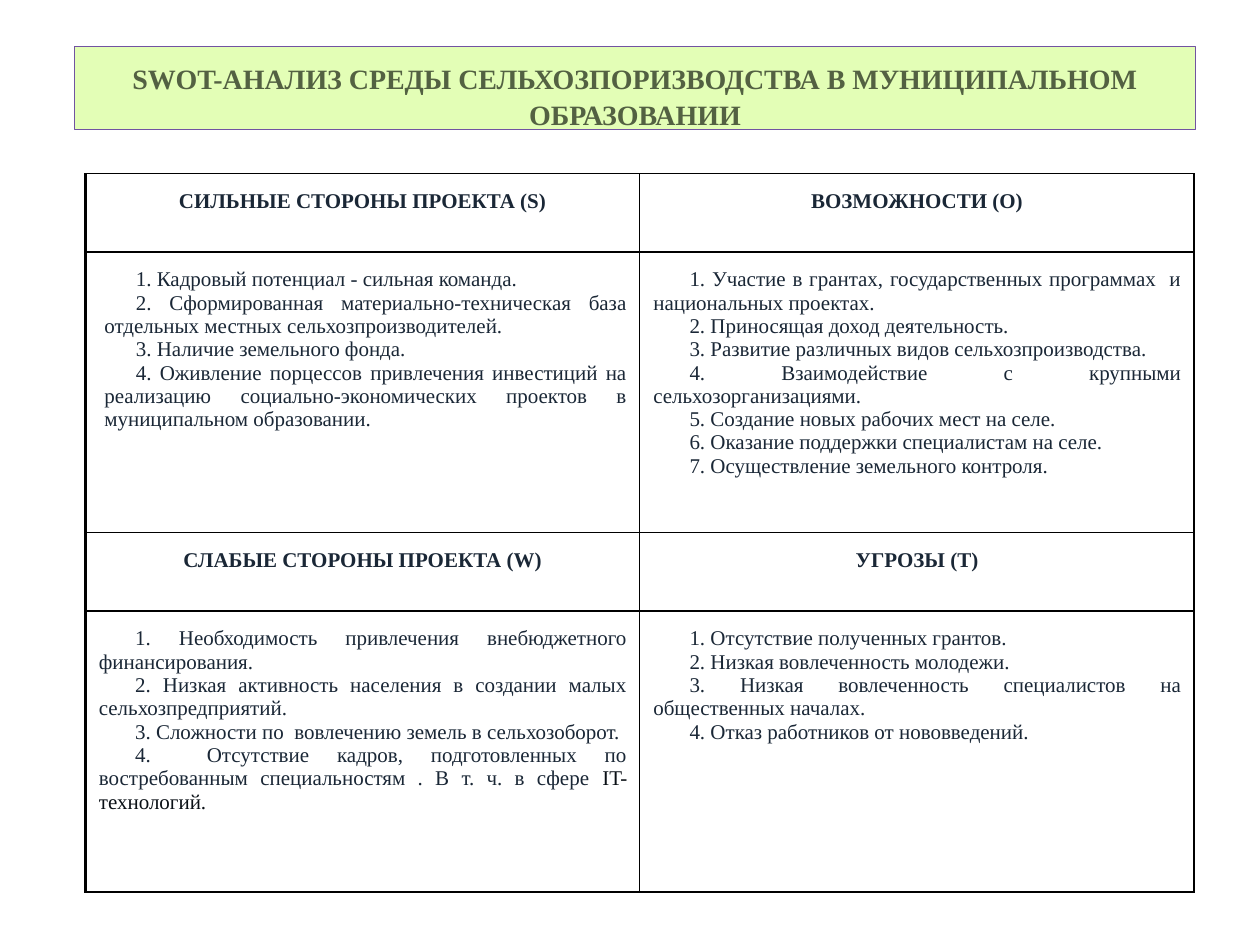
import pptx
import pptx.util
import pptx.dml.color
import pptx.enum.text
import pptx.oxml
import pptx.oxml.ns

Pt = pptx.util.Pt
RGB = pptx.dml.color.RGBColor.from_string
ALIGN = pptx.enum.text.PP_ALIGN
ANCHOR = pptx.enum.text.MSO_ANCHOR
FONT = "Times New Roman"
COLORS = {"band": "E3FEB6", "edge": "7153A1", "title": "536142",
          "text": "1A2736", "dark": "0A1016", "rule": "000000"}


def style(font, size, color, bold):
    font.name, font.size, font.bold = FONT, Pt(size), bold
    font.color.rgb = RGB(COLORS[color])


def border(cell, widths):
    props = cell._tc.get_or_add_tcPr()
    for i, (side, width) in enumerate(zip(("lnL", "lnR", "lnT", "lnB"), widths)):
        line = pptx.oxml.parse_xml(
            f'<a:{side} {pptx.oxml.ns.nsdecls("a")} w="{Pt(width)}"><a:solidFill>'
            f'<a:srgbClr val="{COLORS["rule"]}"/></a:solidFill></a:{side}>')
        props.insert(i, line)


# Slide
deck = pptx.Presentation()
deck.slide_width, deck.slide_height = Pt(720), Pt(540)
slide = deck.slides.add_slide(deck.slide_layouts[5])

# Title band
title = slide.shapes.title
title.left, title.top, title.width, title.height = Pt(42.5), Pt(26.6), Pt(640.8), Pt(47.5)
title.fill.solid()
title.fill.fore_color.rgb = RGB(COLORS["band"])
title.line.color.rgb = RGB(COLORS["edge"])
title.line.width = Pt(0.75)
frame = title.text_frame
frame.text = "SWOT-АНАЛИЗ СРЕДЫ СЕЛЬХОЗПОРИЗВОДСТВА В МУНИЦИПАЛЬНОМ ОБРАЗОВАНИИ"
frame.auto_size = pptx.enum.text.MSO_AUTO_SIZE.NONE
frame.vertical_anchor = ANCHOR.TOP
frame.margin_left = frame.margin_right = Pt(7.2)
frame.margin_top = frame.margin_bottom = Pt(7.2)
para = frame.paragraphs[0]
para.alignment = ALIGN.CENTER
para.line_spacing = 1.07
style(para.font, 16, "title", True)

# SWOT text: heading, left margin, first-line indent, points
parts = [
    ("СИЛЬНЫЕ СТОРОНЫ ПРОЕКТА (S)", 3.6, 18, [
        "1. Кадровый потенциал - сильная команда.",
        "2. Сформированная материально-техническая база отдельных местных сельхозпроизводителей.",
        "3. Наличие земельного фонда.",
        "4. Оживление порцессов привлечения инвестиций на реализацию "
        "социально-экономических проектов в муниципальном образовании."]),
    ("ВОЗМОЖНОСТИ (O)", 0.5, 20.7, [
        "1. Участие в грантах, государственных программах  и национальных проектах.",
        "2. Приносящая доход деятельность.",
        "3. Развитие различных видов сельхозпроизводства.",
        "4. Взаимодействие с крупными сельхозорганизациями.",
        "5. Создание новых рабочих мест на селе.",
        "6. Оказание поддержки специалистам на селе.",
        "7. Осуществление земельного контроля."]),
    ("СЛАБЫЕ СТОРОНЫ ПРОЕКТА (W)", 0.5, 20.7, [
        "1. Необходимость привлечения внебюджетного финансирования.",
        "2. Низкая активность населения в создании малых сельхозпредприятий.",
        "3. Сложности по  вовлечению земель в сельхозоборот.",
        "4.  Отсутствие кадров, подготовленных по востребованным "
        "специальностям . В т. ч. в сфере "]),
    ("УГРОЗЫ (T)", 0.5, 20.7, [
        "1. Отсутствие полученных грантов.",
        "2. Низкая вовлеченность молодежи.",
        "3. Низкая вовлеченность специалистов на общественных началах.",
        "4. Отказ работников от нововведений."]),
]

# Table grid
table = slide.shapes.add_table(4, 2, Pt(48.8), Pt(99.2), Pt(633.6), Pt(410.4)).table
table.first_row = table.horz_banding = False
for col in table.columns:
    col.width = Pt(316.8)
for i, row in enumerate(table.rows):
    row.height = Pt((44.6, 160.6)[i % 2])
    for j, cell in enumerate(row.cells):
        cell.fill.background()
        cell.margin_left = cell.margin_right = Pt(7.2)
        cell.margin_top = cell.margin_bottom = Pt(9.4)
        border(cell, (0.75 if j else 1.5, 1.5 if j else 0.75,
                      1.5 if i % 2 else 0.75, 0.75 if i == 1 else 1.5))

# Table text
for n, (head, left, indent, points) in enumerate(parts):
    i, j = n // 2 * 2, n % 2
    cell = table.cell(i, j)
    cell.text = head
    para = cell.text_frame.paragraphs[0]
    para.alignment = ALIGN.CENTER
    style(para.font, 12, "text", True)
    body = table.cell(i + 1, j).text_frame
    body.text = "\n".join(points)
    for para in body.paragraphs:
        para.alignment = ALIGN.JUSTIFY
        props = para._p.get_or_add_pPr()
        props.set("marL", str(Pt(left)))
        props.set("indent", str(Pt(indent)))
        style(para.font, 12, "text", False)

# Darker ending of the last weakness
run = table.cell(3, 0).text_frame.paragraphs[-1].add_run()
run.text = "IT-технологий."
run.font.color.rgb = RGB(COLORS["dark"])

deck.save("out.pptx")
